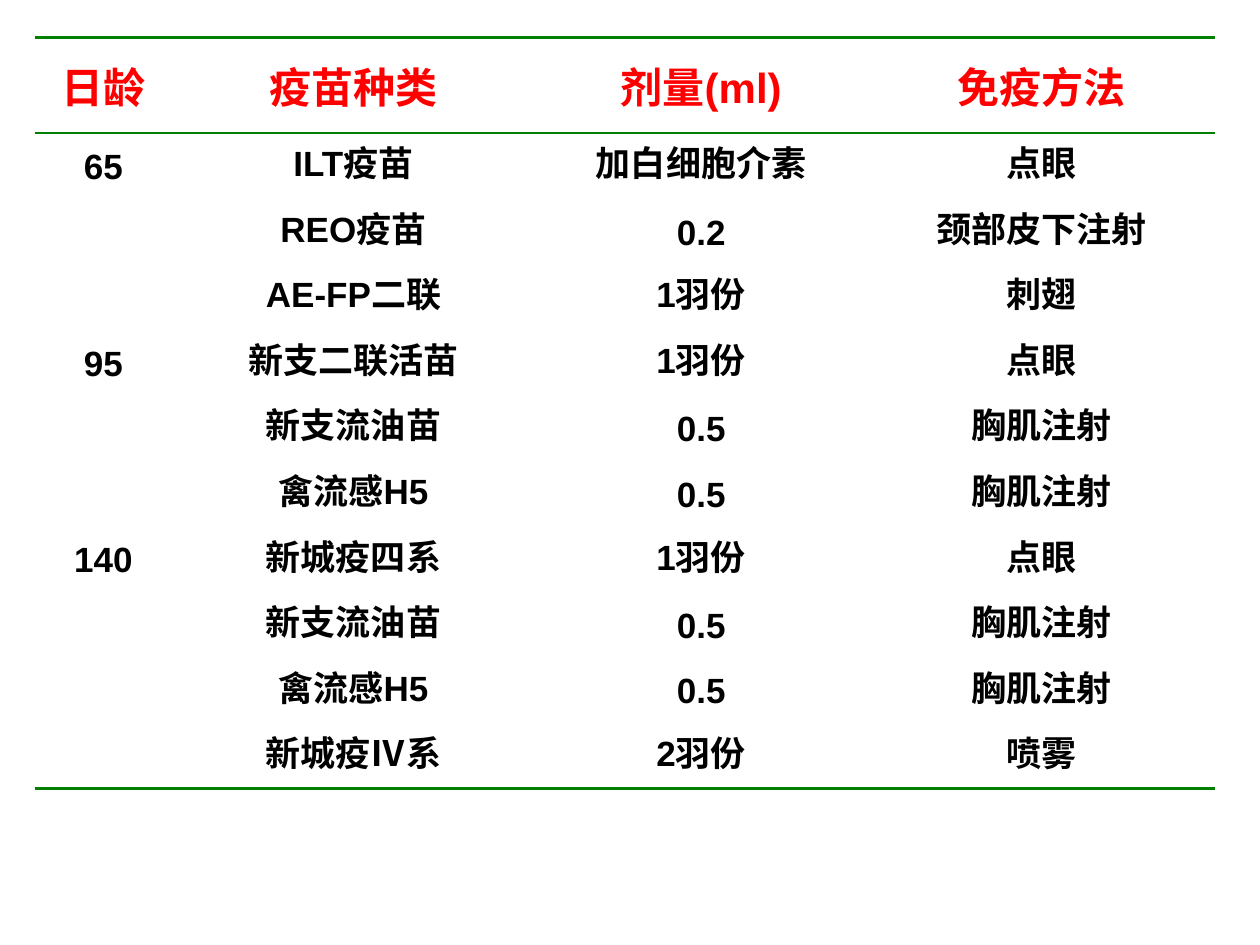
import pptx
import pptx.dml.color
import pptx.enum.text
import pptx.oxml.ns
import pptx.util
from lxml import etree

Pt = pptx.util.Pt
RGBColor = pptx.dml.color.RGBColor
qn = pptx.oxml.ns.qn

RED = RGBColor(0xFF, 0x00, 0x00)
BLACK = RGBColor(0x00, 0x00, 0x00)
GREEN = RGBColor(0x00, 0x7F, 0x00)

HEADER = ("日龄", "疫苗种类", "剂量(ml)", "免疫方法")
SCHEDULE = [
    ("65", "ILT疫苗", "加白细胞介素", "点眼"),
    ("", "REO疫苗", "0.2", "颈部皮下注射"),
    ("", "AE-FP二联", "1羽份", "刺翅"),
    ("95", "新支二联活苗", "1羽份", "点眼"),
    ("", "新支流油苗", "0.5", "胸肌注射"),
    ("", "禽流感H5", "0.5", "胸肌注射"),
    ("140", "新城疫四系", "1羽份", "点眼"),
    ("", "新支流油苗", "0.5", "胸肌注射"),
    ("", "禽流感H5", "0.5", "胸肌注射"),
    ("", "新城疫Ⅳ系", "2羽份", "喷雾"),
]
COLUMN_WIDTHS = (78.5, 207.4, 190, 198.7)
HEADER_HEIGHT, ROW_HEIGHT = 54.7, 37.45
LEFT, TOP = 19.8, 21.4
HANGING_INDENT = 27
THICK, THIN = 2, 1


def write_cell(cell, text, *, size, color, line_spacing=None):
    cell.vertical_anchor = pptx.enum.text.MSO_ANCHOR.MIDDLE
    cell.margin_left = cell.margin_right = Pt(7.2)
    cell.margin_top = cell.margin_bottom = Pt(4.3)
    para = cell.text_frame.paragraphs[0]
    para.alignment = pptx.enum.text.PP_ALIGN.CENTER
    if line_spacing:
        para.line_spacing = Pt(line_spacing)
    properties = para._p.get_or_add_pPr()
    properties.set("marL", str(Pt(HANGING_INDENT)))
    properties.set("indent", str(Pt(-HANGING_INDENT)))
    if text:
        span = para.add_run()
        span.text = text
        font = span.font
    else:
        font = para.font
    font.name = "Arial"
    font.size = Pt(size)
    font.bold = True
    font.color.rgb = color


def set_borders(cell, top, bottom):
    """Draw green top and bottom edges of the given widths; zero means no line."""
    properties = cell._tc.get_or_add_tcPr()
    for side, width in (("L", 0), ("R", 0), ("T", top), ("B", bottom)):
        line = etree.SubElement(properties, qn(f"a:ln{side}"), w=str(Pt(width)))
        if width:
            fill = etree.SubElement(line, qn("a:solidFill"))
            etree.SubElement(fill, qn("a:srgbClr"), val=str(GREEN))
        else:
            etree.SubElement(line, qn("a:noFill"))


deck = pptx.Presentation()
deck.slide_width, deck.slide_height = Pt(720), Pt(540)
page = deck.slides.add_slide(deck.slide_layouts[6])

rows = [HEADER, *SCHEDULE]
heights = [HEADER_HEIGHT] + [ROW_HEIGHT] * len(SCHEDULE)
edges = [THICK, THIN] + [0] * (len(SCHEDULE) - 1) + [THICK]

table = page.shapes.add_table(
    len(rows), len(HEADER), Pt(LEFT), Pt(TOP), Pt(sum(COLUMN_WIDTHS)), Pt(sum(heights))
).table
table.first_row = table.horz_banding = False
for column, width in zip(table.columns, COLUMN_WIDTHS):
    column.width = Pt(width)

for index, texts in enumerate(rows):
    table.rows[index].height = Pt(heights[index])
    if index == 0:
        style = dict(size=24, color=RED)
    else:
        style = dict(size=20, color=BLACK, line_spacing=24)
    for cell, text in zip(table.rows[index].cells, texts):
        write_cell(cell, text, **style)
        set_borders(cell, edges[index], edges[index + 1])
        cell.fill.background()

deck.save("out.pptx")
